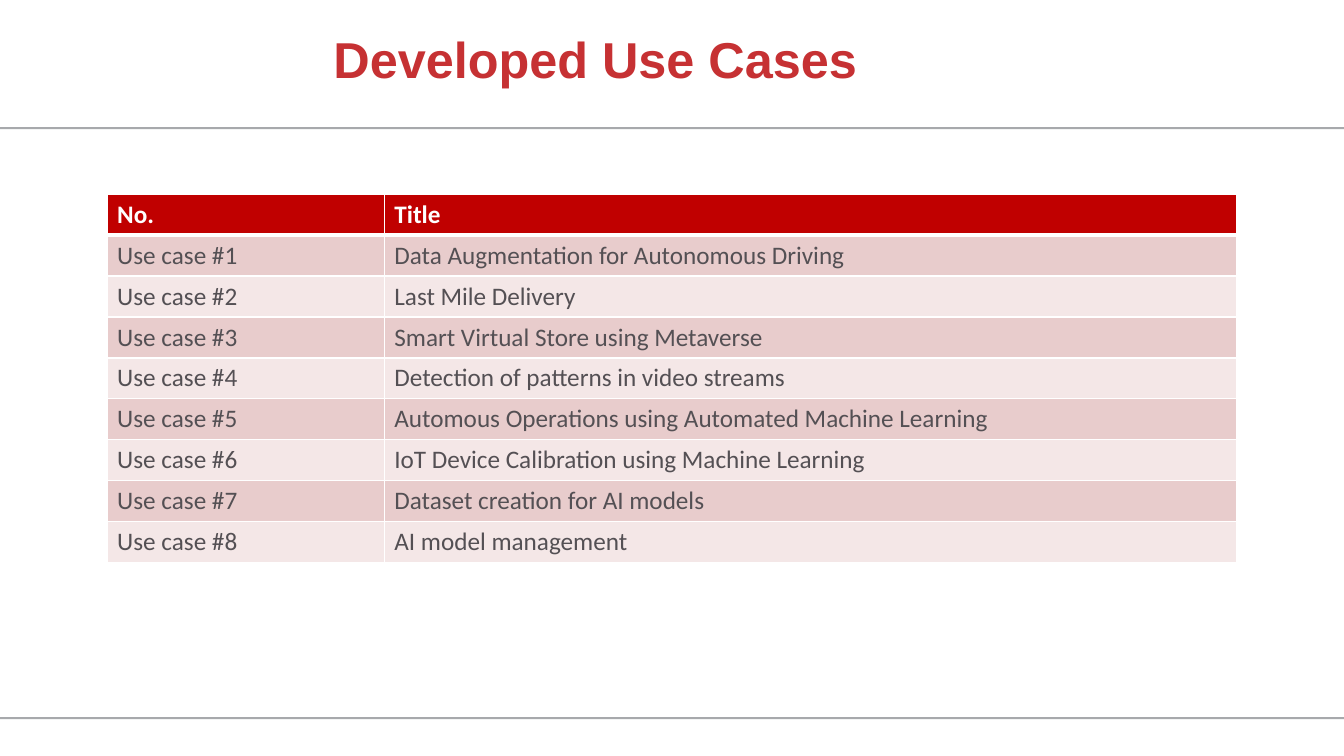
from lxml import etree
from pptx import Presentation
from pptx import util as u
from pptx.dml.color import RGBColor
from pptx.enum import shapes, text
from pptx.oxml.ns import qn

PX = 9525  # EMU per pixel, 96 pixels to the inch
COLORS = {
    "rule": "A7A9AC", "title": "C63133", "header": "C00000",
    "band_dark": "E8CCCC", "band_light": "F4E7E7",
    "body": "545054", "white": "FFFFFF",
}
USE_CASES = [
    "Data Augmentation for Autonomous Driving",
    "Last Mile Delivery",
    "Smart Virtual Store using Metaverse",
    "Detection of patterns in video streams",
    "Automous Operations using Automated Machine Learning",
    "IoT Device Calibration using Machine Learning",
    "Dataset creation for AI models",
    "AI model management",
]
COLUMN_WIDTHS = [264, 812]
ROW_HEIGHT = 39


def color(name):
    return RGBColor.from_string(COLORS[name])


def add_border(cell, side, points):
    """Draw one white cell border; call before the cell is filled."""
    properties = cell._tc.get_or_add_tcPr()
    line = etree.SubElement(properties, qn(f"a:ln{side}"), w=str(u.Pt(points)))
    fill = etree.SubElement(line, qn("a:solidFill"))
    etree.SubElement(fill, qn("a:srgbClr"), val=COLORS["white"])


deck = Presentation()
deck.slide_width, deck.slide_height = 1280 * PX, 720 * PX
page = deck.slides.add_slide(deck.slide_layouts[5])

# Rules above and below the content
for top in (121, 683):
    rule = page.shapes.add_shape(
        shapes.MSO_SHAPE.RECTANGLE, 0, top * PX, deck.slide_width, 2 * PX)
    rule.shadow.inherit = False
    rule.fill.solid()
    rule.fill.fore_color.rgb = color("rule")
    rule.line.fill.background()

# Title
title = page.shapes.title
title.left, title.top, title.width, title.height = 0, -1 * PX, 1134 * PX, 120 * PX
title.text_frame.text = "Developed Use Cases"
title.text_frame.vertical_anchor = text.MSO_ANCHOR.MIDDLE
para = title.text_frame.paragraphs[0]
para.alignment = text.PP_ALIGN.CENTER
para.line_spacing = 0.9
para.font.name, para.font.size, para.font.bold = "Arial", u.Pt(36), True
para.font.color.rgb = color("title")

# Table of use cases
rows = [("No.", "Title")]
rows += [(f"Use case #{number}", name) for number, name in enumerate(USE_CASES, 1)]
table = page.shapes.add_table(
    len(rows), len(COLUMN_WIDTHS), 102 * PX, 185 * PX,
    sum(COLUMN_WIDTHS) * PX, len(rows) * ROW_HEIGHT * PX).table
for column, width in zip(table.columns, COLUMN_WIDTHS):
    column.width = width * PX

for r, row in enumerate(rows):
    table.rows[r].height = ROW_HEIGHT * PX
    is_header = r == 0
    band = "header" if is_header else "band_dark" if r % 2 else "band_light"
    for c, words in enumerate(row):
        cell = table.cell(r, c)
        add_border(cell, "L", 1)
        add_border(cell, "R", 1)
        add_border(cell, "T", 3 if r == 1 else 1)
        add_border(cell, "B", 3 if is_header else 1)
        cell.fill.solid()
        cell.fill.fore_color.rgb = color(band)
        cell.text = words
        font = cell.text_frame.paragraphs[0].font
        font.name, font.size, font.bold = "Calibri", u.Pt(18), is_header
        font.color.rgb = color("white" if is_header else "body")

deck.save("out.pptx")
